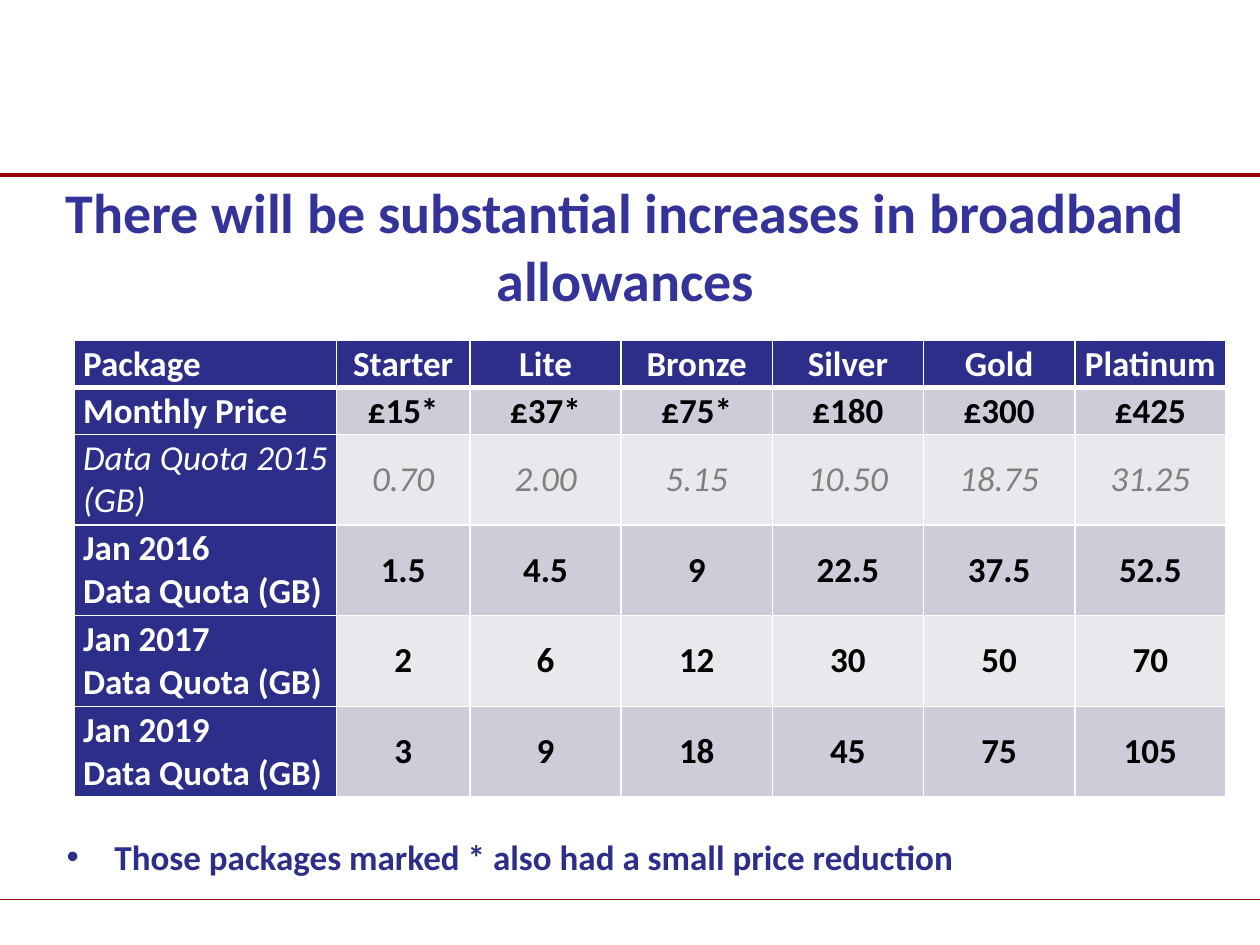
from pptx import Presentation
from pptx.dml.color import RGBColor
from pptx.enum.shapes import MSO_CONNECTOR
from pptx.enum.text import MSO_ANCHOR, PP_ALIGN
from pptx.oxml.ns import qn
from pptx.util import Inches, Pt
from lxml.etree import SubElement

WHITE = RGBColor(0xFF, 0xFF, 0xFF)
BLACK = RGBColor(0x00, 0x00, 0x00)
GRAY = RGBColor(0x80, 0x80, 0x80)
RED = RGBColor(0x99, 0x00, 0x00)
TITLE_BLUE = RGBColor(0x33, 0x33, 0x99)
NAVY = RGBColor(0x2D, 0x2D, 0x8A)
BANDS = (RGBColor(0xE8, 0xE8, 0xED), RGBColor(0xCD, 0xCD, 0xDA))

FONT = "Calibri"
COLUMNS, ROWS = 100, 75  # slide grid
UNIT = Inches(0.1)

PACKAGES = [
    ["Package", "Starter", "Lite", "Bronze", "Silver", "Gold", "Platinum"],
    ["Monthly Price", "£15*", "£37*", "£75*", "£180", "£300", "£425"],
    ["Data Quota 2015 (GB)", "0.70", "2.00", "5.15", "10.50", "18.75", "31.25"],
    ["Jan 2016\nData Quota (GB)", "1.5", "4.5", "9", "22.5", "37.5", "52.5"],
    ["Jan 2017\nData Quota (GB)", "2", "6", "12", "30", "50", "70"],
    ["Jan 2019\nData Quota (GB)", "3", "9", "18", "45", "75", "105"],
]
COLUMN_UNITS = [20.8, 10.6] + [12] * 5
ROW_UNITS = [3.7] * 2 + [7.2] * 4
OLD_QUOTA_ROW = 2


def grid(*units):
    return [round(value * UNIT) for value in units]


def style_font(para, size, color, bold=True, italic=False):
    font = para.font
    font.name, font.size = FONT, Pt(size)
    font.bold, font.italic = bold, italic
    font.color.rgb = color


def add_rule(page, row, width):
    left, right, y = grid(0, COLUMNS, row)
    rule = page.shapes.add_connector(MSO_CONNECTOR.STRAIGHT, left, y, right, y)
    rule.line.color.rgb = RED
    rule.line.width = Pt(width)
    SubElement(rule._element.spPr, qn("a:effectLst"))


def add_text(page, box, text):
    frame = page.shapes.add_textbox(*grid(*box)).text_frame
    frame.word_wrap = True
    frame.text = text
    return frame


def add_title(page, box):
    frame = add_text(page, box, "There will be substantial increases in broadband allowances")
    frame.vertical_anchor = MSO_ANCHOR.MIDDLE
    para = frame.paragraphs[0]
    para.alignment = PP_ALIGN.CENTER
    style_font(para, 32, TITLE_BLUE)


def add_footnote(page, box):
    frame = add_text(page, box, "Those packages marked * also had a small price reduction")
    para = frame.paragraphs[0]
    properties = para._p.get_or_add_pPr()
    indent = Inches(0.38)
    properties.set("marL", str(indent))
    properties.set("indent", str(-indent))
    SubElement(properties, qn("a:buFont"), typeface="Arial")
    SubElement(properties, qn("a:buChar"), char="•")
    style_font(para, 20, NAVY)


def add_borders(cell, row):
    """Draw white cell borders, with a heavier one under the header."""
    properties = cell._tc.get_or_add_tcPr()
    widths = {"L": 1, "R": 1, "T": 3 if row == 1 else 1, "B": 3 if row == 0 else 1}
    for side, width in widths.items():
        border = SubElement(properties, qn(f"a:ln{side}"), w=str(Pt(width)))
        fill = SubElement(border, qn("a:solidFill"))
        SubElement(fill, qn("a:srgbClr"), val=str(WHITE))


def fill_cell(cell, text, row, column):
    is_label = column == 0
    is_heading = is_label or row == 0
    is_old = row == OLD_QUOTA_ROW
    add_borders(cell, row)
    cell.fill.solid()
    cell.fill.fore_color.rgb = NAVY if is_heading else BANDS[row % 2]
    cell.margin_left = cell.margin_right = Inches(0.07)
    cell.margin_top = cell.margin_bottom = Inches(0.02)
    cell.vertical_anchor = MSO_ANCHOR.TOP if is_label and row else MSO_ANCHOR.MIDDLE
    cell.text = text
    if is_heading:
        color = WHITE
    else:
        color = GRAY if is_old else BLACK
    if is_label:
        alignment = PP_ALIGN.LEFT if is_old else PP_ALIGN.JUSTIFY
    else:
        alignment = PP_ALIGN.CENTER
    for para in cell.text_frame.paragraphs:
        para.alignment = alignment
        style_font(para, 20, color, bold=not is_old, italic=is_old)


def add_package_table(page, left, top):
    box = grid(left, top, sum(COLUMN_UNITS), sum(ROW_UNITS))
    table = page.shapes.add_table(len(PACKAGES), len(PACKAGES[0]), *box).table
    for column, width in zip(table.columns, grid(*COLUMN_UNITS)):
        column.width = width
    for row, height in zip(table.rows, grid(*ROW_UNITS)):
        row.height = height
    for row, texts in enumerate(PACKAGES):
        for column, text in enumerate(texts):
            fill_cell(table.cell(row, column), text, row, column)


def main():
    deck = Presentation()
    deck.slide_width, deck.slide_height = grid(COLUMNS, ROWS)
    page = deck.slides.add_slide(deck.slide_layouts[6])
    add_rule(page, 71.4, 0.75)
    add_rule(page, 13.9, 2.5)
    add_title(page, (2, 15.5, 95.3, 7.9))
    add_footnote(page, (4.3, 65.8, 94.5, 4.7))
    add_package_table(page, 5.9, 27)
    deck.save("out.pptx")


if __name__ == "__main__":
    main()
